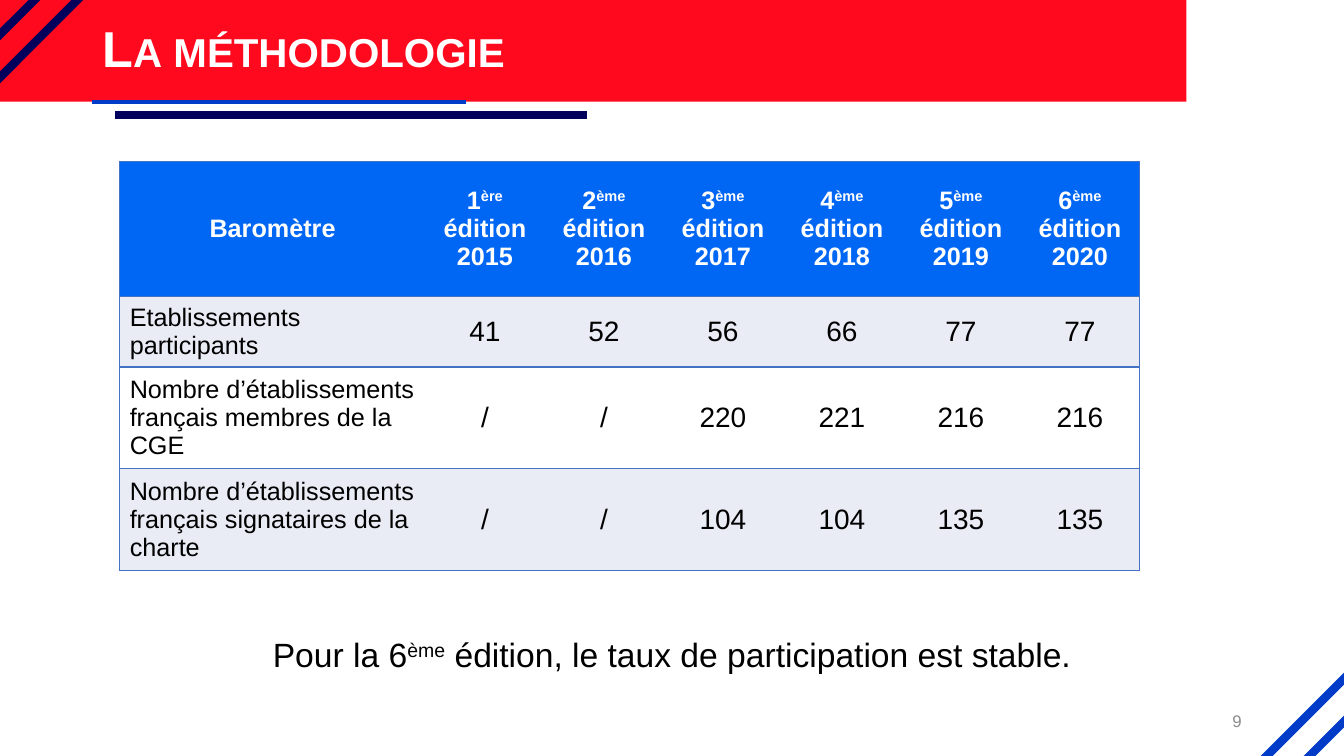
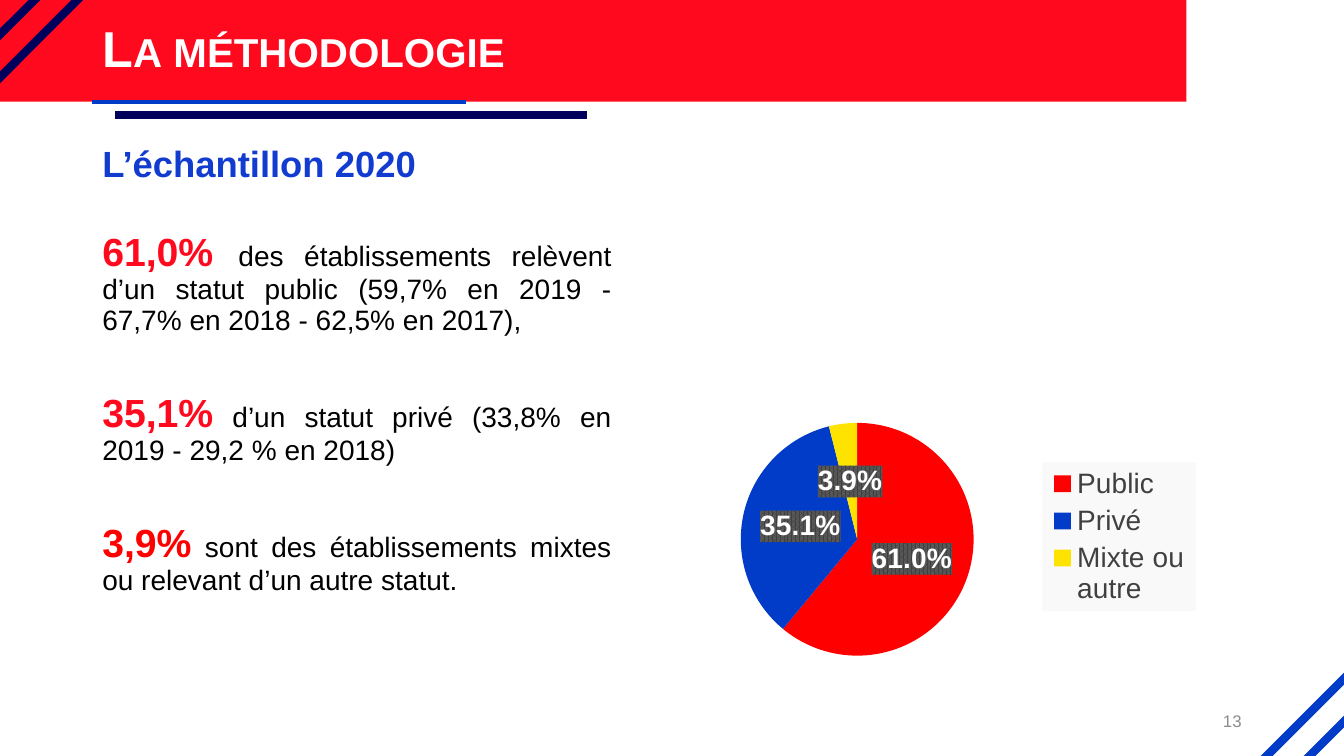
"""Builds two methodology slides: a table of survey editions and a pie of school statuses."""
from dataclasses import dataclass
from typing import Any, NamedTuple

import lxml.etree
import pptx
import pptx.chart.data
import pptx.dml.color
import pptx.enum.chart
import pptx.enum.shapes
import pptx.enum.text
import pptx.oxml
import pptx.oxml.ns
import pptx.util

COLUMNS, ROWS = 160, 90
SLIDE_WIDTH = pptx.util.Inches(13.33)
SLIDE_HEIGHT = pptx.util.Inches(7.5)
FONT = "Arial"
RED, BLUE, NAVY = "FF091E", "003CC8", "00005C"
WHITE, BLACK, GREY = "FFFFFF", "000000", "8C8C8C"
HEADER_BLUE, STRIPE, BORDER = "0067F4", "E9EBF5", "4472C4"
NO_GRID_STYLE = "{2D5ABB26-0587-4C30-8999-92F81FD0307C}"
ALIGN = pptx.enum.text.PP_ALIGN
MIDDLE = pptx.enum.text.MSO_ANCHOR.MIDDLE
TOP = pptx.enum.text.MSO_ANCHOR.TOP
DRAWING = 'xmlns:a="http://schemas.openxmlformats.org/drawingml/2006/main"'
CHART = 'xmlns:c="http://schemas.openxmlformats.org/drawingml/2006/chart"'


class Box(NamedTuple):
    """A rectangle in grid columns and rows."""
    left: float
    top: float
    width: float
    height: float


class Rule(NamedTuple):
    """A straight line between two grid points."""
    x1: float
    y1: float
    x2: float
    y2: float
    color: str
    weight: float


@dataclass(frozen=True)
class Run:
    """A piece of text with one format."""
    text: str
    size: float
    color: str = BLACK
    bold: bool = False
    raised: bool = False
    small_caps: bool = False


@dataclass(frozen=True)
class Paragraph:
    """A paragraph made of runs."""
    runs: list[Run]
    align: Any = ALIGN.LEFT
    before: float = 0
    spacing: float = 1.0


@dataclass(frozen=True)
class Share:
    """A pie slice."""
    name: str
    value: float
    color: str


def across(columns: float) -> int:
    """Converts grid columns to a length."""
    return round(columns * SLIDE_WIDTH / COLUMNS)


def down(rows: float) -> int:
    """Converts grid rows to a length."""
    return round(rows * SLIDE_HEIGHT / ROWS)


def place(box: Box) -> tuple[int, int, int, int]:
    """Converts a grid box to slide lengths."""
    return across(box.left), down(box.top), across(box.width), down(box.height)


def rgb(color: str) -> pptx.dml.color.RGBColor:
    """Turns a hex string into a colour."""
    return pptx.dml.color.RGBColor.from_string(color)


def paint(fill: Any, color: str) -> None:
    """Gives a fill one solid colour."""
    fill.solid()
    fill.fore_color.rgb = rgb(color)


def set_font(font: Any, size: float, color: str, bold: bool = False) -> None:
    """Sets the shared typeface with a size, colour and weight."""
    font.name = FONT
    font.size = pptx.util.Pt(size)
    font.bold = bold
    font.color.rgb = rgb(color)


def write(frame: Any, paragraphs: list[Paragraph]) -> None:
    """Fills a text frame run by run."""
    for index, content in enumerate(paragraphs):
        paragraph = frame.add_paragraph() if index else frame.paragraphs[0]
        paragraph.alignment = content.align
        paragraph.line_spacing = content.spacing
        paragraph.space_before = pptx.util.Pt(content.before)
        for piece in content.runs:
            run = paragraph.add_run()
            run.text = piece.text
            set_font(run.font, piece.size, piece.color, piece.bold)
            properties = run._r.get_or_add_rPr()
            if piece.raised:
                properties.set("baseline", "30000")
            if piece.small_caps:
                properties.set("cap", "small")


def add_text(slide: Any, box: Box, paragraphs: list[Paragraph], anchor: Any = TOP) -> None:
    """Adds a wrapping text box."""
    frame = slide.shapes.add_textbox(*place(box)).text_frame
    frame.word_wrap = True
    frame.vertical_anchor = anchor
    write(frame, paragraphs)


def add_rule(slide: Any, rule: Rule) -> None:
    """Draws a straight line without shadow."""
    connector = slide.shapes.add_connector(
        pptx.enum.shapes.MSO_CONNECTOR.STRAIGHT,
        across(rule.x1), down(rule.y1), across(rule.x2), down(rule.y2))
    connector.line.color.rgb = rgb(rule.color)
    connector.line.width = pptx.util.Pt(rule.weight)
    lxml.etree.SubElement(connector._element.spPr, pptx.oxml.ns.qn("a:effectLst"))


def corner_rules() -> list[Rule]:
    """Gives the diagonals that cut two opposite corners."""
    overhang = 1.1
    rules = []
    for reach in (4.1, 9.2):
        near, far = -overhang, reach + overhang
        rules.append(Rule(near, far, far, near, NAVY, 6))
        rules.append(Rule(COLUMNS - near, ROWS - far, COLUMNS - far, ROWS - near, BLUE, 6))
    return rules


def add_frame(slide: Any, number: int) -> None:
    """Draws the band, lines, title and page number shared by the slides."""
    band = slide.shapes.add_shape(
        pptx.enum.shapes.MSO_SHAPE.RECTANGLE, *place(Box(0, 0, 141.25, 12.1)))
    band.shadow.inherit = False
    paint(band.fill, RED)
    band.line.fill.background()
    underlines = [Rule(11, 12.1, 55.5, 12.1, BLUE, 3), Rule(13.7, 13.7, 69.9, 13.7, NAVY, 6)]
    for rule in corner_rules() + underlines:
        add_rule(slide, rule)
    title = Run("La méthodologie", 36, WHITE, bold=True, small_caps=True)
    add_text(slide, Box(11, 0, 138, 12.1), [Paragraph([title], spacing=0.9)], MIDDLE)
    add_text(slide, Box(113, 83.4, 36, 4.8),
             [Paragraph([Run(str(number), 12, GREY)], ALIGN.RIGHT)], MIDDLE)


def fill_cell(cell: Any, content: Paragraph, color: str, sides: str) -> None:
    """Writes a table cell with its fill and bordered sides."""
    cell.vertical_anchor = MIDDLE
    write(cell.text_frame, [content])
    paint(cell.fill, color)
    properties = cell._tc.get_or_add_tcPr()
    for index, side in enumerate(sides):
        properties.insert(index, pptx.oxml.parse_xml(
            f'<a:ln{side} {DRAWING} w="12700"><a:solidFill><a:srgbClr val="{BORDER}"/>'
            f'</a:solidFill></a:ln{side}>'))


def add_edition_table(slide: Any) -> None:
    """Adds the table of participation by edition."""
    editions = [("1", "ère", 2015), ("2", "ème", 2016), ("3", "ème", 2017),
                ("4", "ème", 2018), ("5", "ème", 2019), ("6", "ème", 2020)]
    records = [
        ("Etablissements participants", "41 52 56 66 77 77"),
        ("Nombre d’établissements français membres de la CGE", "/ / 220 221 216 216"),
        ("Nombre d’établissements français signataires de la charte", "/ / 104 104 135 135"),
    ]
    header = [Paragraph([Run("Baromètre", 18, WHITE, True)], ALIGN.CENTER)]
    for rank, suffix, year in editions:
        header.append(Paragraph([
            Run(rank, 18, WHITE, True), Run(suffix, 18, WHITE, True, raised=True),
            Run(f" édition {year}", 18, WHITE, True)], ALIGN.CENTER))
    grid = [header]
    for label, values in records:
        grid.append([Paragraph([Run(label, 18)])] + [
            Paragraph([Run(value, 20)], ALIGN.CENTER) for value in values.split()])
    widths = [36.4] + [14.17] * len(editions)
    heights = [16.1, 8.3, 12.1, 12.1]
    box = Box(14.25, 19.2, sum(widths), sum(heights))
    table = slide.shapes.add_table(len(heights), len(widths), *place(box)).table
    table.horz_banding = False
    table._tbl.tblPr.find(pptx.oxml.ns.qn("a:tableStyleId")).text = NO_GRID_STYLE
    for column, width in zip(table.columns, widths):
        column.width = across(width)
    for row, height in zip(table.rows, heights):
        row.height = down(height)
    fills = [HEADER_BLUE, STRIPE, WHITE, STRIPE]
    for row_index, (contents, color) in enumerate(zip(grid, fills)):
        for column_index, content in enumerate(contents):
            sides = {0: "LTB", len(widths) - 1: "RTB"}.get(column_index, "TB")
            fill_cell(table.cell(row_index, column_index), content, color, sides)


def layout_xml(box: Box, target: str = "") -> Any:
    """Makes a chart layout from shares of the chart's size."""
    parts = "".join(f'<c:{mode}Mode val="edge"/>' for mode in "xy")
    parts += "".join(f'<c:{key} val="{value}"/>' for key, value in zip("xywh", box))
    return pptx.oxml.parse_xml(
        f'<c:layout {CHART}><c:manualLayout>{target}{parts}</c:manualLayout></c:layout>')


def chart_fill_xml(fill: str) -> Any:
    """Wraps a fill as chart shape properties."""
    return pptx.oxml.parse_xml(f'<c:spPr {CHART} {DRAWING}>{fill}</c:spPr>')


def add_status_pie(slide: Any, shares: list[Share]) -> None:
    """Adds the pie of statuses with its labels and legend."""
    data = pptx.chart.data.CategoryChartData()
    data.categories = [share.name for share in shares]
    data.add_series("Series 1", [share.value for share in shares])
    chart = slide.shapes.add_chart(
        pptx.enum.chart.XL_CHART_TYPE.PIE, *place(Box(80, 48.1, 63, 31.6)), data).chart
    chart.has_title = False
    set_font(chart.font, 20, BLACK)
    plot = chart.plots[0]
    plot.vary_by_categories = True
    series = plot.series[0]
    for index, share in enumerate(shares):
        point = series.points[index].format
        paint(point.fill, share.color)
        point.line.fill.background()
    labels = series.data_labels
    labels.show_percentage = True
    labels.show_value = False
    labels.number_format = "0.0%"
    labels.number_format_is_linked = False
    labels.position = pptx.enum.chart.XL_LABEL_POSITION.CENTER
    set_font(labels.font, 20, WHITE, True)
    labels._element.find(pptx.oxml.ns.qn("c:numFmt")).addnext(chart_fill_xml(
        '<a:pattFill prst="pct75"><a:fgClr><a:srgbClr val="404040"/></a:fgClr>'
        '<a:bgClr><a:srgbClr val="595959"/></a:bgClr></a:pattFill>'))
    chart.has_legend = True
    legend = chart.legend
    legend.position = pptx.enum.chart.XL_LEGEND_POSITION.RIGHT
    legend.include_in_layout = False
    set_font(legend.font, 20, "404040")
    legend_element = legend._element
    legend_element.find(pptx.oxml.ns.qn("c:legendPos")).addnext(
        layout_xml(Box(0.7, 0.22, 0.29, 0.56)))
    legend_element.find(pptx.oxml.ns.qn("c:txPr")).addprevious(
        chart_fill_xml('<a:solidFill><a:srgbClr val="F9F9F9"/></a:solidFill>'))
    plot_area = chart._chartSpace.chart.plotArea
    for layout in plot_area.findall(pptx.oxml.ns.qn("c:layout")):
        plot_area.remove(layout)
    plot_area.insert(0, layout_xml(
        Box(0.13, 0.07, 0.44, 0.88), '<c:layoutTarget val="inner"/>'))


def add_sample_text(slide: Any) -> None:
    """Adds the heading and the comments on each status."""
    lines = [
        ([Run("L’échantillon 2020", 26, "123BD0", True)], 0),
        ([Run("61,0%", 28, RED, True), Run(" ", 32, BLUE),
          Run("des établissements relèvent d’un statut public "
              "(59,7% en 2019 - 67,7% en 2018 - 62,5% en 2017),", 20)], 30),
        ([Run("35,1%", 28, RED, True),
          Run(" d’un statut privé (33,8% en 2019 - 29,2 % en 2018)", 20)], 41),
        ([Run("3,9%", 28, "FF0000", True),
          Run(" sont des établissements mixtes ou relevant d’un autre statut.", 20)], 41),
    ]
    add_text(slide, Box(11, 16.8, 63, 64.3),
             [Paragraph(runs, ALIGN.JUSTIFY, before, 0.9) for runs, before in lines])


def main() -> None:
    """Builds and saves the presentation."""
    presentation = pptx.Presentation()
    presentation.slide_width = SLIDE_WIDTH
    presentation.slide_height = SLIDE_HEIGHT
    blank = presentation.slide_layouts[6]
    editions = presentation.slides.add_slide(blank)
    add_frame(editions, 9)
    add_text(editions, Box(17.4, 74.9, 125.2, 10.9), [Paragraph([
        Run("Pour la 6", 24), Run("ème", 24, raised=True),
        Run(" édition, le taux de participation est stable.", 24)], ALIGN.CENTER)])
    add_edition_table(editions)
    sample = presentation.slides.add_slide(blank)
    add_frame(sample, 13)
    add_sample_text(sample)
    add_status_pie(sample, [Share("Public", 61, "FF0000"), Share("Privé", 35.1, BLUE),
                            Share("Mixte ou autre", 3.9, "FFE300")])
    presentation.save("out.pptx")


if __name__ == "__main__":
    main()
